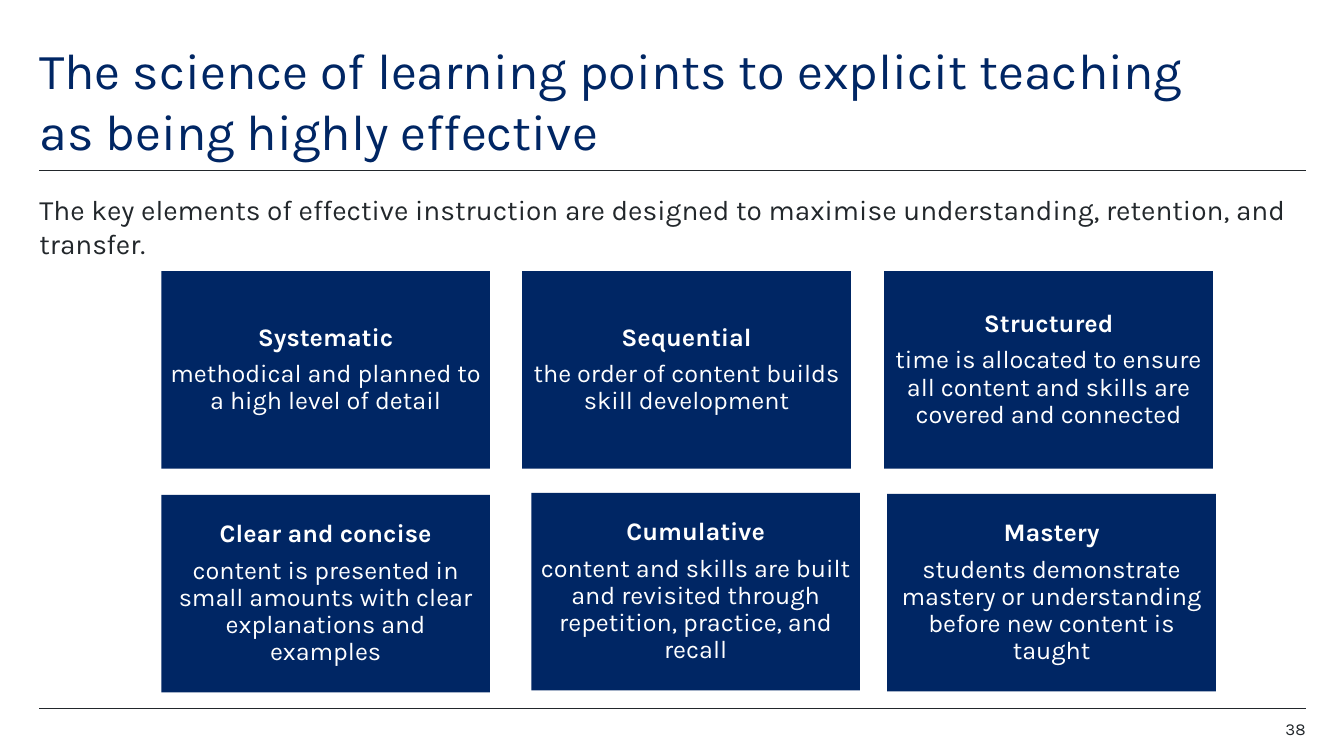
from pptx import Presentation
from pptx.dml.color import RGBColor
from pptx.enum.shapes import MSO_CONNECTOR as CONN, MSO_SHAPE as SHAPE
from pptx.enum.text import MSO_ANCHOR as ANCHOR, PP_ALIGN as ALIGN
from pptx.oxml.ns import qn
from pptx.util import Pt
from lxml import etree

PX = 9144
FONT, NAVY, INK, WHITE = "Karla", "002664", "22272B", "FFFFFF"
LEFT, RIGHT = 39, 1295
CARD_W, CARD_H = 326, 196

CARDS = [
    (160, 269, "Systematic", "methodical and planned to a high level of detail"),
    (518, 269, "Sequential", "the order of content builds skill development"),
    (877, 269, "Structured",
     "time is allocated to ensure all content and skills are covered and connected"),
    (160, 491, "Clear and concise",
     "content is presented in small amounts with clear explanations and examples"),
    (527, 489, "Cumulative",
     "content and skills are built and revisited through repetition, practice, and recall"),
    (880, 490, "Mastery",
     "students demonstrate mastery or understanding before new content is taught"),
]


def px(*lengths):
    """Turn whole px into EMU."""
    return [n * PX for n in lengths]


def color(hex_str):
    """Return the colour for a hex string."""
    return RGBColor.from_string(hex_str)


def style(p, size, hex_str, align, bold=False):
    """Format a paragraph and its runs."""
    p.alignment = align
    for r in p.runs:
        r.font.name, r.font.size, r.font.bold = FONT, Pt(size), bold
        r.font.color.rgb = color(hex_str)


def set_insets(tf, inset):
    """Wrap the text and give all four sides one inset."""
    tf.word_wrap = True
    tf.margin_left = tf.margin_top = tf.margin_right = tf.margin_bottom = inset * PX


def add_text(s, box, text, size, hex_str, align=ALIGN.LEFT):
    """Place a line of text in a box without insets."""
    tf = s.shapes.add_textbox(*px(*box)).text_frame
    set_insets(tf, 0)
    tf.text = text
    style(tf.paragraphs[0], size, hex_str, align)


def add_rule(s, y):
    """Draw a thin rule across the content width."""
    rule = s.shapes.add_connector(CONN.STRAIGHT, *px(LEFT, y, RIGHT, y))
    rule.line.color.rgb = color(INK)
    rule.line.width = Pt(0.5)
    etree.SubElement(rule._element.spPr, qn("a:effectLst"))


def add_card(s, box, heading, detail):
    """Place a filled card with a bold heading over its detail."""
    sp = s.shapes.add_shape(SHAPE.RECTANGLE, *px(*box))
    sp.shadow.inherit = False
    sp.fill.solid()
    sp.fill.fore_color.rgb = color(NAVY)
    sp.line.fill.background()
    tf = sp.text_frame
    set_insets(tf, 7)
    tf.vertical_anchor = ANCHOR.MIDDLE
    tf.text = f"{heading}\n{detail}"
    for p, bold in zip(tf.paragraphs, (True, False)):
        p.line_spacing = 0.9
        p.space_after = Pt(6.3)
        style(p, 18, WHITE, ALIGN.CENTER, bold)


def add_header(s):
    """Place the title, its rule and the introduction."""
    add_text(s, (LEFT, 39, 1150, 77),
             "The science of learning points to explicit teaching as being highly effective",
             36, NAVY)
    add_rule(s, 169)
    add_text(s, (LEFT, 191, 1269, 64),
             "The key elements of effective instruction are designed to maximise "
             "understanding, retention, and transfer.", 20, INK)


def add_footer(s):
    """Place the bottom rule and the page number."""
    add_rule(s, 703)
    add_text(s, (RIGHT - 79, 713, 79, 20), "38", 12, INK, ALIGN.RIGHT)


def main():
    """Build and save the slide."""
    prs = Presentation()
    prs.slide_width, prs.slide_height = px(1333, 750)
    s = prs.slides.add_slide(prs.slide_layouts[6])
    add_header(s)
    for x, y, heading, detail in CARDS:
        add_card(s, (x, y, CARD_W, CARD_H), heading, detail)
    add_footer(s)
    prs.save("out.pptx")


if __name__ == "__main__":
    main()
